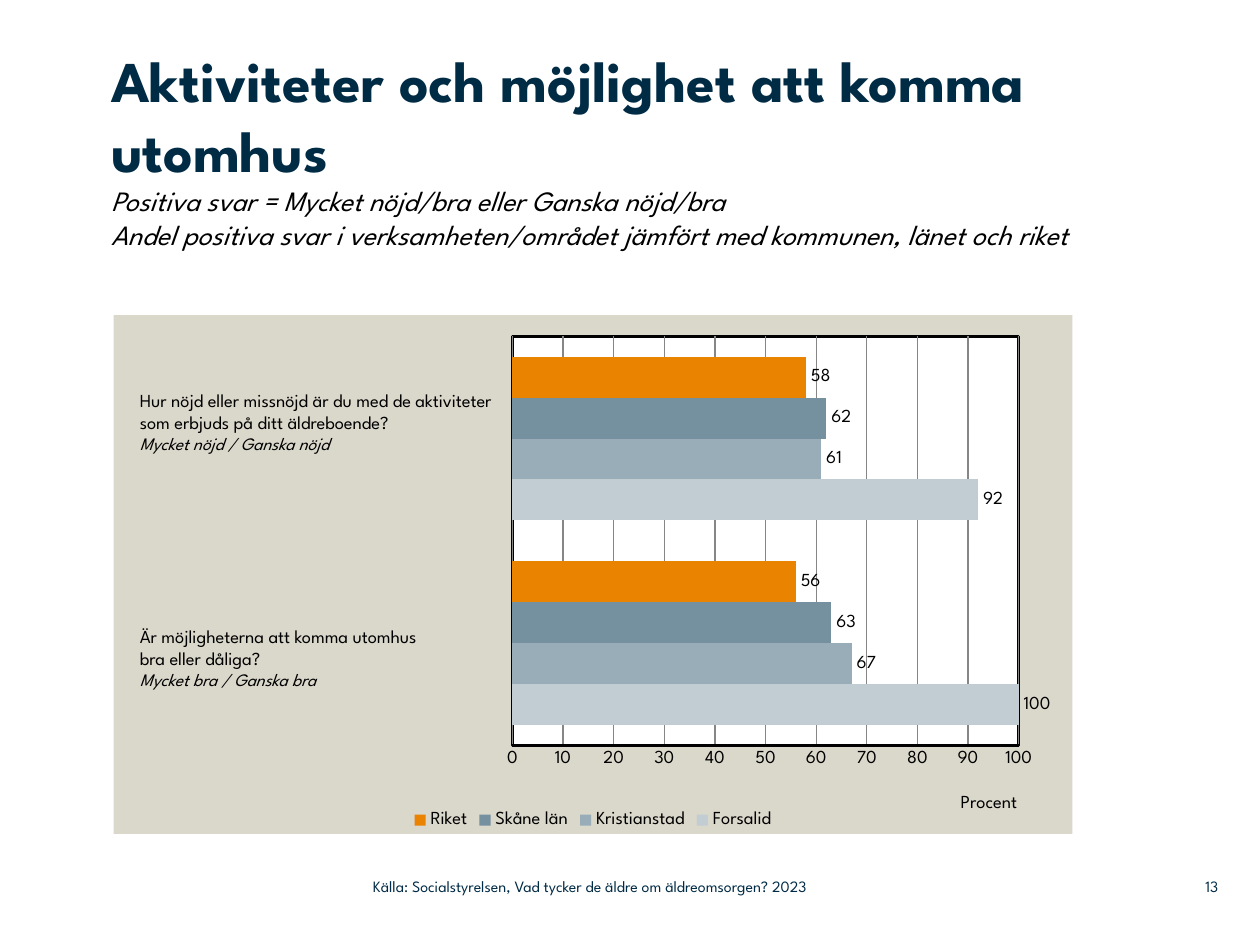
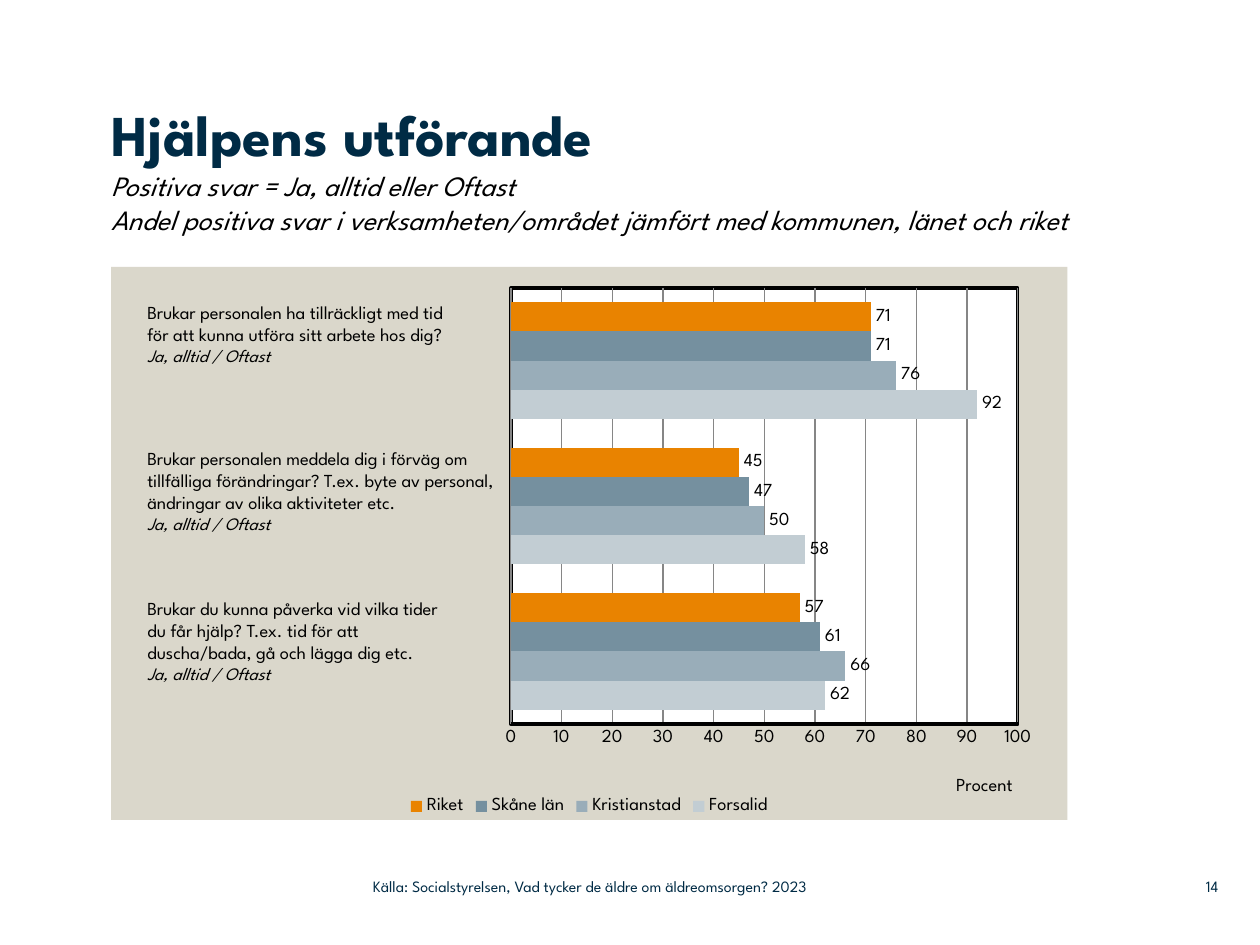
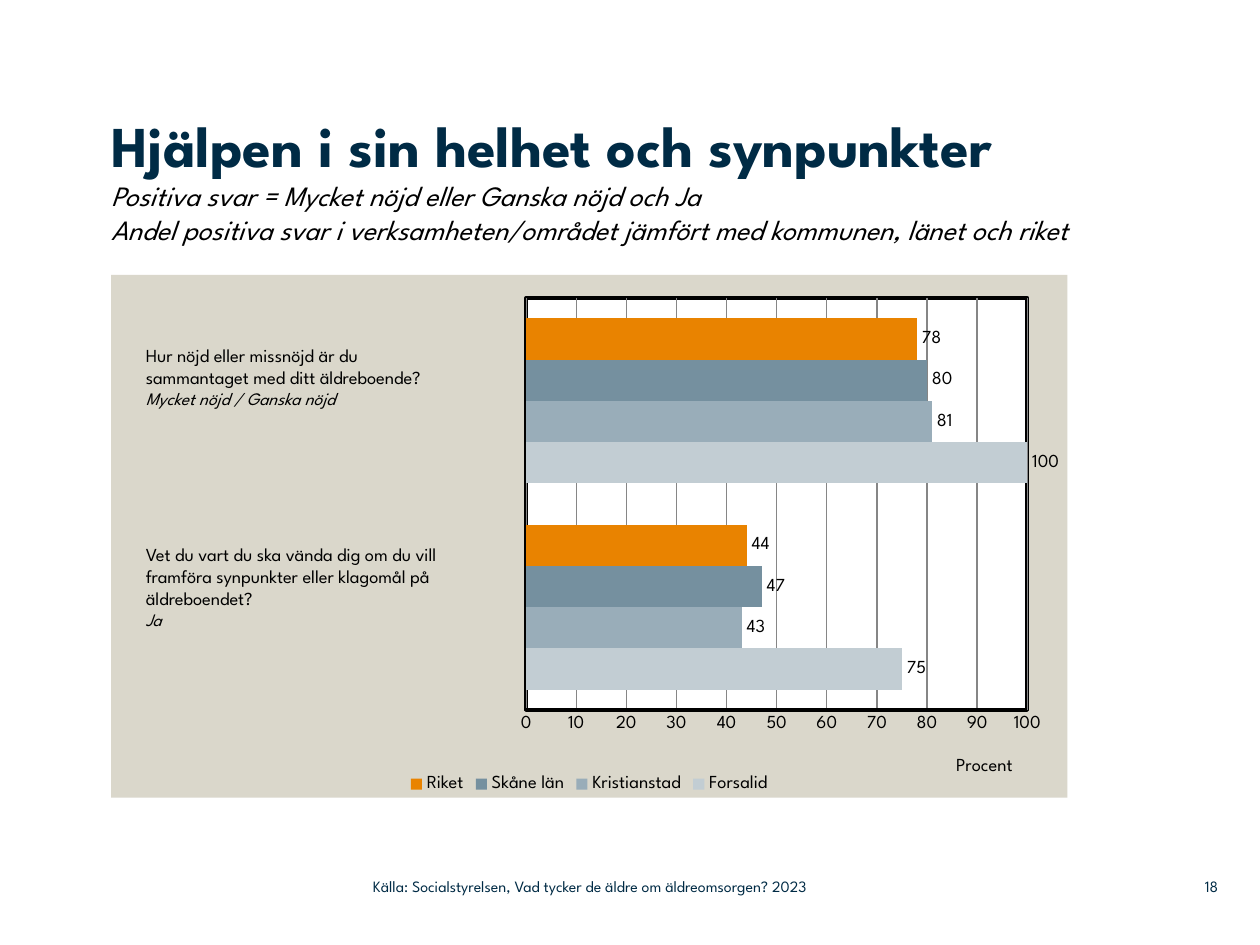
from lxml.etree import SubElement
from pptx import Presentation
from pptx.chart.data import CategoryChartData
from pptx.dml.color import RGBColor
from pptx.enum.chart import XL_CHART_TYPE, XL_LABEL_POSITION, XL_LEGEND_POSITION, XL_TICK_MARK
from pptx.enum.text import MSO_ANCHOR, MSO_AUTO_SIZE, PP_ALIGN
from pptx.oxml import parse_xml
from pptx.oxml.ns import nsdecls, qn
from pptx.util import Cm, Pt

FONT = "League Spartan"
COLOURS = {
    "navy": "002B45", "black": "000000", "white": "FFFFFF", "sand": "DAD7CB", "grid": "868686",
    "Forsalid": "C2CDD3", "Kristianstad": "99ADB9", "Skåne län": "75909F", "Riket": "E98300",
}
SOURCE = "Källa: Socialstyrelsen, Vad tycker de äldre om äldreomsorgen? 2023"
COMPARISON = "Andel positiva svar i verksamheten/området jämfört med kommunen, länet och riket"

# Boxes are (left, top, width, height) in cm; plots are fractions of the chart.
PAGES = [
    {
        "number": "13",
        "title": "Aktiviteter och möjlighet att komma utomhus",
        "positive": "Positiva svar = Mycket nöjd/bra eller Ganska nöjd/bra",
        "title_box": (2.24, 0.81, 19.8, 4.8),
        "chart_box": (2.29, 6.35, 19.33, 10.46),
        "plot": {"x": 0.416, "y": 0.041, "w": 0.528, "h": 0.789},
        "values": {"Forsalid": (100, 92), "Kristianstad": (67, 61),
                   "Skåne län": (63, 62), "Riket": (56, 58)},
        "question_left": 2.57,
        "questions": [
            (7.72, ["Hur nöjd eller missnöjd är du med de aktiviteter som erbjuds på ditt äldreboende?",
                    "Mycket nöjd / Ganska nöjd"]),
            (12.47, ["Är möjligheterna att komma utomhus", "bra eller dåliga?",
                     "Mycket bra / Ganska bra"]),
        ],
    },
    {
        "number": "14",
        "title": "Hjälpens utförande",
        "positive": "Positiva svar = Ja, alltid eller Oftast",
        "title_box": (2.24, 1.9, 19.8, 3.07),
        "chart_box": (2.24, 5.38, 19.28, 11.15),
        "plot": {"x": 0.418, "y": 0.038, "w": 0.53, "h": 0.789},
        "values": {"Forsalid": (62, 58, 92), "Kristianstad": (66, 50, 76),
                   "Skåne län": (61, 47, 71), "Riket": (57, 45, 71)},
        "question_left": 2.72,
        "questions": [
            (5.94, ["Brukar personalen ha tillräckligt med tid",
                    "för att kunna utföra sitt arbete hos dig?", "Ja, alltid / Oftast"]),
            (8.89, ["Brukar personalen meddela dig i förväg om tillfälliga förändringar? "
                    "T.ex. byte av personal, ändringar av olika aktiviteter etc.",
                    "Ja, alltid / Oftast"]),
            (11.91, ["Brukar du kunna påverka vid vilka tider", "du får hjälp? T.ex. tid för att",
                     "duscha/bada, gå och lägga dig etc.", "Ja, alltid / Oftast"]),
        ],
    },
    {
        "number": "18",
        "title": "Hjälpen i sin helhet och synpunkter",
        "positive": "Positiva svar = Mycket nöjd eller Ganska nöjd och Ja",
        "title_box": (2.24, 2.11, 19.8, 3.4),
        "chart_box": (2.24, 5.54, 19.28, 10.54),
        "plot": {"x": 0.434, "y": 0.044, "w": 0.524, "h": 0.789},
        "values": {"Forsalid": (75, 100), "Kristianstad": (43, 81),
                   "Skåne län": (47, 80), "Riket": (44, 78)},
        "question_left": 2.69,
        "questions": [
            (6.81, ["Hur nöjd eller missnöjd är du", "sammantaget med ditt äldreboende?",
                    "Mycket nöjd / Ganska nöjd"]),
            (10.82, ["Vet du vart du ska vända dig om du vill framföra synpunkter "
                     "eller klagomål på äldreboendet?", "Ja"]),
        ],
    },
]


def write_lines(frame, lines, align=PP_ALIGN.LEFT):
    """Fill a text frame with one paragraph per (text, size, colour, bold, italic)."""
    frame.word_wrap = True
    for index, (text, size, colour, bold, italic) in enumerate(lines):
        paragraph = frame.add_paragraph() if index else frame.paragraphs[0]
        paragraph.text = text
        paragraph.alignment = align
        font = paragraph.font
        font.name, font.size, font.bold, font.italic = FONT, Pt(size), bold, italic
        font.color.rgb = RGBColor.from_string(COLOURS[colour])


def place_chart_part(part, position, fractions, inner=False):
    """Give a chart part a manual layout, as child number position."""
    for old in part.findall(qn("c:layout")):
        part.remove(old)
    layout = parse_xml(f"<c:layout {nsdecls('c')}><c:manualLayout/></c:layout>")
    if inner:
        SubElement(layout[0], qn("c:layoutTarget")).set("val", "inner")
    for key in "xy":
        SubElement(layout[0], qn(f"c:{key}Mode")).set("val", "edge")
    for key, value in fractions.items():
        SubElement(layout[0], qn(f"c:{key}")).set("val", str(value))
    part.insert(position, layout)


deck = Presentation()
deck.slide_width, deck.slide_height = Cm(25.4), Cm(19.05)

for content in PAGES:
    page = deck.slides.add_slide(deck.slide_layouts[5])

    # Title with its two explanatory lines
    title = page.shapes.title
    title.left, title.top, title.width, title.height = map(Cm, content["title_box"])
    frame = title.text_frame
    frame.auto_size = MSO_AUTO_SIZE.NONE
    frame.vertical_anchor = MSO_ANCHOR.TOP
    frame.margin_left = frame.margin_right = frame.margin_bottom = 0
    frame.margin_top = Cm(0.1)
    write_lines(frame, [
        (content["title"], 33, "navy", True, False),
        (content["positive"], 16, "black", False, True),
        (COMPARISON, 16, "black", False, True),
    ])

    # Bar chart
    data = CategoryChartData()
    data.categories = [str(number + 1) for number in range(len(content["questions"]))]
    for name, values in content["values"].items():
        data.add_series(name, values)
    chart = page.shapes.add_chart(
        XL_CHART_TYPE.BAR_CLUSTERED, *map(Cm, content["chart_box"]), data).chart
    chart.has_title = False
    chart.font.name, chart.font.size = FONT, Pt(10.5)
    chart.font.color.rgb = RGBColor.from_string(COLOURS["black"])
    chart.has_legend = True
    chart.legend.position = XL_LEGEND_POSITION.BOTTOM
    chart.legend.include_in_layout = False

    plot = chart.plots[0]
    plot.gap_width, plot.overlap, plot.vary_by_categories = 100, 0, False
    plot.has_data_labels = True
    plot.data_labels.show_value = True
    plot.data_labels.position = XL_LABEL_POSITION.OUTSIDE_END
    for series in plot.series:
        series.format.fill.solid()
        series.format.fill.fore_color.rgb = RGBColor.from_string(COLOURS[series.name])

    chart.category_axis.visible = False
    axis = chart.value_axis
    axis.minimum_scale, axis.maximum_scale, axis.major_unit = 0, 100, 10
    axis.major_tick_mark = axis.minor_tick_mark = XL_TICK_MARK.NONE
    axis.has_major_gridlines = True
    for line, colour, width in ((axis.format.line, "black", 2),
                                (axis.major_gridlines.format.line, "grid", 0.75)):
        line.color.rgb = RGBColor.from_string(COLOURS[colour])
        line.width = Pt(width)
    write_lines(axis.axis_title.text_frame, [("Procent", 10.5, "black", False, False)])
    place_chart_part(axis.axis_title.element if hasattr(axis.axis_title, "element")
                     else axis.axis_title._element, 1, {"x": 0.88, "y": 0.915})

    # Chart and plot backgrounds
    plot_area = chart.element.find(".//" + qn("c:plotArea"))
    place_chart_part(plot_area, 0, content["plot"], inner=True)
    chart_fill, plot_fill = (
        parse_xml(f'<c:spPr {nsdecls("c", "a")}><a:solidFill><a:srgbClr val="{COLOURS[colour]}"/>'
                  f"</a:solidFill>{border}</c:spPr>")
        for colour, border in (
            ("sand", "<a:ln><a:noFill/></a:ln>"),
            ("white", f'<a:ln w="{Pt(2)}"><a:solidFill><a:srgbClr val="{COLOURS["black"]}"/>'
                      "</a:solidFill></a:ln>")))
    plot_area.append(plot_fill)
    chart.element.find(qn("c:chart")).addnext(chart_fill)

    # Questions beside the bars, each ending with the answers that count
    for top, lines in content["questions"]:
        box = page.shapes.add_textbox(Cm(content["question_left"]), Cm(top), Cm(7.65), Cm(2.1))
        write_lines(box.text_frame,
                    [(text, 10.5, "black", False, False) for text in lines[:-1]]
                    + [(lines[-1], 10, "black", False, True)])

    # Footer
    for left, width, text, align in ((7.52, 11.25, SOURCE, PP_ALIGN.LEFT),
                                     (23.37, 1.19, content["number"], PP_ALIGN.RIGHT)):
        frame = page.shapes.add_textbox(Cm(left), Cm(17.5), Cm(width), Cm(0.74)).text_frame
        frame.margin_left = frame.margin_right = frame.margin_top = frame.margin_bottom = 0
        frame.vertical_anchor = MSO_ANCHOR.MIDDLE
        write_lines(frame, [(text, 9, "navy", False, False)], align)

deck.save("out.pptx")
